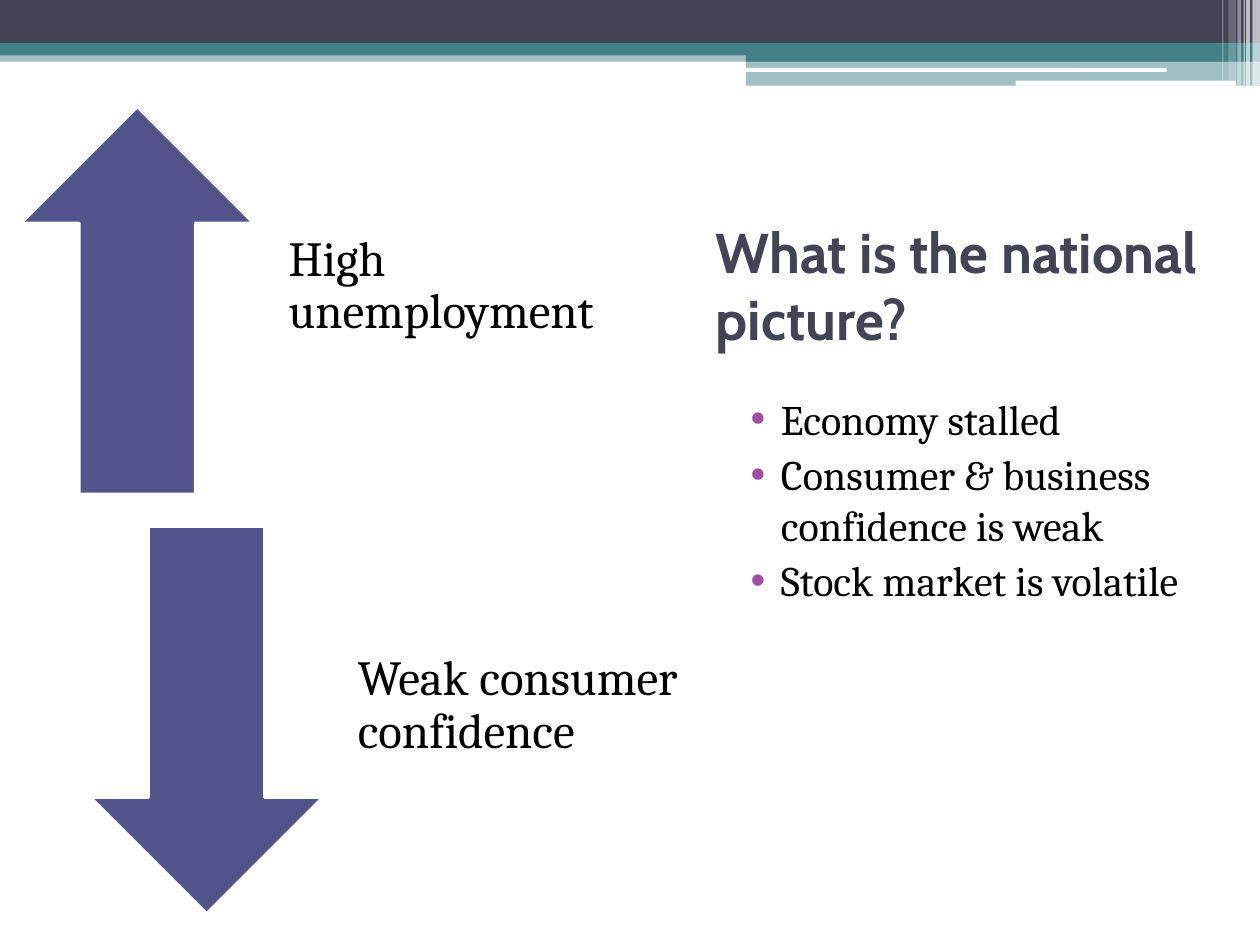
from dataclasses import dataclass

from lxml.etree import SubElement
from pptx import Presentation
from pptx.dml.color import RGBColor
from pptx.enum.shapes import MSO_SHAPE
from pptx.enum.text import MSO_ANCHOR, MSO_AUTO_SIZE, PP_ALIGN
from pptx.oxml.ns import qn
from pptx.shapes.autoshape import Shape
from pptx.slide import Slide
from pptx.text.text import _Paragraph as Paragraph
from pptx.util import Inches, Length, Pt

COLUMNS, ROWS = 100, 75
SLIDE_WIDTH, SLIDE_HEIGHT = Inches(10), Inches(7.5)

SLATE = RGBColor(0x42, 0x44, 0x56)
TEAL = RGBColor(0x43, 0x80, 0x86)
INDIGO = RGBColor(0x53, 0x54, 0x8A)
PURPLE = RGBColor(0xA0, 0x4D, 0xA3)
BLACK = RGBColor(0, 0, 0)
WHITE = RGBColor(0xFF, 0xFF, 0xFF)

TITLE_FONT, BODY_FONT = "Cabin", "Cambria"


@dataclass(frozen=True)
class Area:
    column: float
    row: float
    columns: float
    rows: float

    def lengths(self) -> tuple[Length, Length, Length, Length]:
        return (
            Length(round(SLIDE_WIDTH * self.column / COLUMNS)),
            Length(round(SLIDE_HEIGHT * self.row / ROWS)),
            Length(round(SLIDE_WIDTH * self.columns / COLUMNS)),
            Length(round(SLIDE_HEIGHT * self.rows / ROWS)),
        )


@dataclass(frozen=True)
class Band:
    area: Area
    color: RGBColor
    opacity: int = 100
    kind: MSO_SHAPE = MSO_SHAPE.RECTANGLE


@dataclass(frozen=True)
class Trend:
    column: float
    row: float
    arrow: MSO_SHAPE
    label: str


BANDS = [
    Band(Area(0, 4, 100, 0.9), TEAL, 50),
    Band(Area(0, 0, 100, 3.4), SLATE),
    Band(Area(0, 3.4, 100, 1), TEAL),
    Band(Area(59.2, 3.9, 40.8, 1), TEAL),
    Band(Area(59.2, 4.8, 40.8, 2), TEAL, 50),
    Band(Area(59.1, 5.4, 33.5, 0.3), WHITE, kind=MSO_SHAPE.ROUNDED_RECTANGLE),
    Band(Area(80.6, 6.4, 17.5, 0.4), WHITE, kind=MSO_SHAPE.ROUNDED_RECTANGLE),
    Band(Area(99.4, 0, 0.6, 6.8), WHITE, 65),
    Band(Area(98.9, 0, 0.3, 6.8), WHITE, 65),
    Band(Area(98.7, 0, 0.1, 6.8), WHITE, 60),
    Band(Area(98.2, 0, 0.3, 6.8), WHITE, 40),
    Band(Area(97.5, 0, 0.6, 6.4), WHITE, 20),
    Band(Area(97, 0, 0.1, 6.4), WHITE, 30),
]

TRENDS = [
    Trend(1.7, 8.5, MSO_SHAPE.UP_ARROW, "High unemployment"),
    Trend(7.2, 41.8, MSO_SHAPE.DOWN_ARROW, "Weak consumer confidence"),
]
ARROW_COLUMNS, LABEL_OFFSET, LABEL_COLUMNS, TREND_ROWS = 18.4, 19, 31.2, 30.7

TITLE = "What is the national picture?"
POINTS = [
    "Economy stalled",
    "Consumer & business confidence is weak",
    "Stock market is volatile",
]


def add_filled_shape(slide: Slide, kind: MSO_SHAPE, area: Area, color: RGBColor) -> Shape:
    shape = slide.shapes.add_shape(kind, *area.lengths())
    shape.shadow.inherit = False
    shape.fill.solid()
    shape.fill.fore_color.rgb = color
    shape.line.fill.background()
    return shape


def add_band(slide: Slide, band: Band) -> None:
    shape = add_filled_shape(slide, band.kind, band.area, band.color)
    if band.opacity < 100:
        color = shape._element.spPr.find(qn("a:solidFill"))[0]
        SubElement(color, qn("a:alpha"), val=str(band.opacity * 1000))


def style_font(paragraph: Paragraph, name: str, size: int, color: RGBColor) -> None:
    paragraph.font.name = name
    paragraph.font.size = Pt(size)
    paragraph.font.color.rgb = color


def add_trend(slide: Slide, trend: Trend) -> None:
    arrow_area = Area(trend.column, trend.row, ARROW_COLUMNS, TREND_ROWS)
    arrow = add_filled_shape(slide, trend.arrow, arrow_area, INDIGO)
    arrow.line.color.rgb = WHITE
    arrow.line.width = Pt(1.5)

    label_area = Area(trend.column + LABEL_OFFSET, trend.row, LABEL_COLUMNS, TREND_ROWS)
    frame = slide.shapes.add_textbox(*label_area.lengths()).text_frame
    frame.word_wrap = True
    frame.vertical_anchor = MSO_ANCHOR.MIDDLE
    frame.margin_top = 0
    frame.margin_left = frame.margin_right = frame.margin_bottom = Inches(0.22)
    paragraph = frame.paragraphs[0]
    paragraph.text = trend.label
    paragraph.line_spacing = 0.9
    style_font(paragraph, BODY_FONT, 28, BLACK)


def set_title(slide: Slide) -> None:
    title = slide.shapes.title
    title.left, title.top, title.width, title.height = Area(55.8, 14.2, 41.7, 14.2).lengths()
    frame = title.text_frame
    frame.text = TITLE
    frame.word_wrap = True
    frame.auto_size = MSO_AUTO_SIZE.NONE
    frame.vertical_anchor = MSO_ANCHOR.BOTTOM
    paragraph = frame.paragraphs[0]
    paragraph.alignment = PP_ALIGN.LEFT
    style_font(paragraph, TITLE_FONT, 32, SLATE)
    paragraph.font.bold = True


def add_bullet(paragraph: Paragraph) -> None:
    properties = paragraph._p.get_or_add_pPr()
    properties.set("marL", str(Inches(0.25)))
    properties.set("indent", str(Inches(-0.24)))
    color = SubElement(properties, qn("a:buClr"))
    SubElement(color, qn("a:srgbClr"), val=str(PURPLE))
    SubElement(properties, qn("a:buFont"), typeface="Arial")
    SubElement(properties, qn("a:buChar"), char="•")


def add_points(slide: Slide) -> None:
    frame = slide.shapes.add_textbox(*Area(58.5, 27, 37, 48).lengths()).text_frame
    frame.word_wrap = True
    frame.margin_top = Inches(0.42)
    for index, point in enumerate(POINTS):
        paragraph = frame.add_paragraph() if index else frame.paragraphs[0]
        paragraph.text = point
        paragraph.space_before = Pt(3 if index else 0)
        add_bullet(paragraph)
        style_font(paragraph, BODY_FONT, 24, BLACK)


def main() -> None:
    presentation = Presentation()
    presentation.slide_width, presentation.slide_height = SLIDE_WIDTH, SLIDE_HEIGHT
    slide = presentation.slides.add_slide(presentation.slide_layouts[5])
    for band in BANDS:
        add_band(slide, band)
    set_title(slide)
    add_points(slide)
    for trend in TRENDS:
        add_trend(slide, trend)
    presentation.save("out.pptx")


if __name__ == "__main__":
    main()
